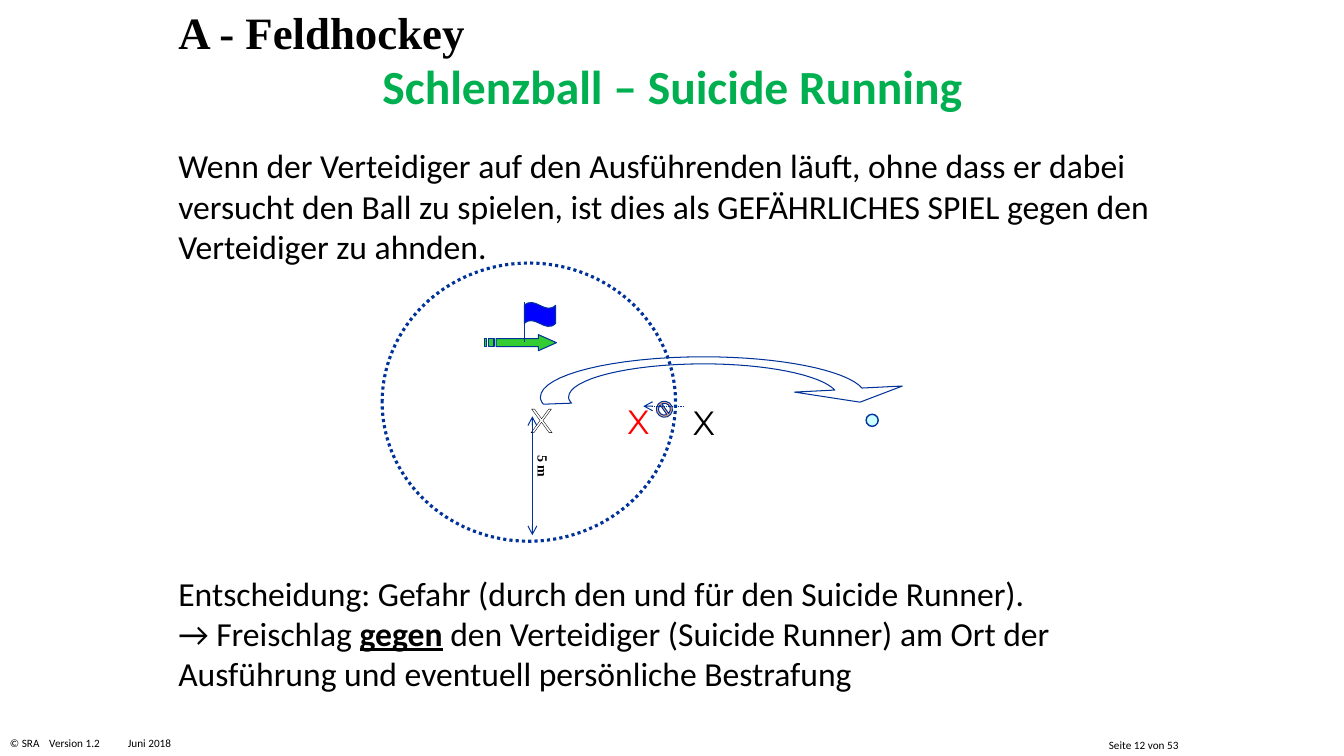
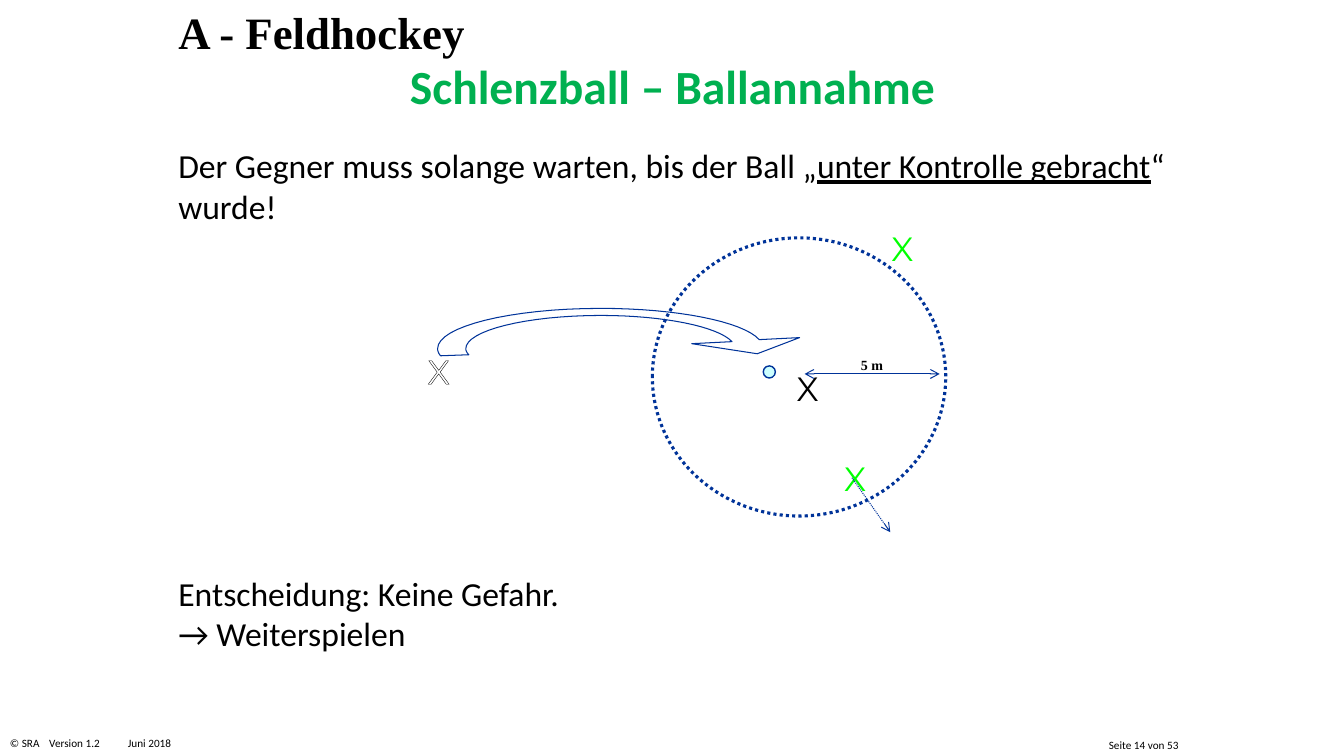
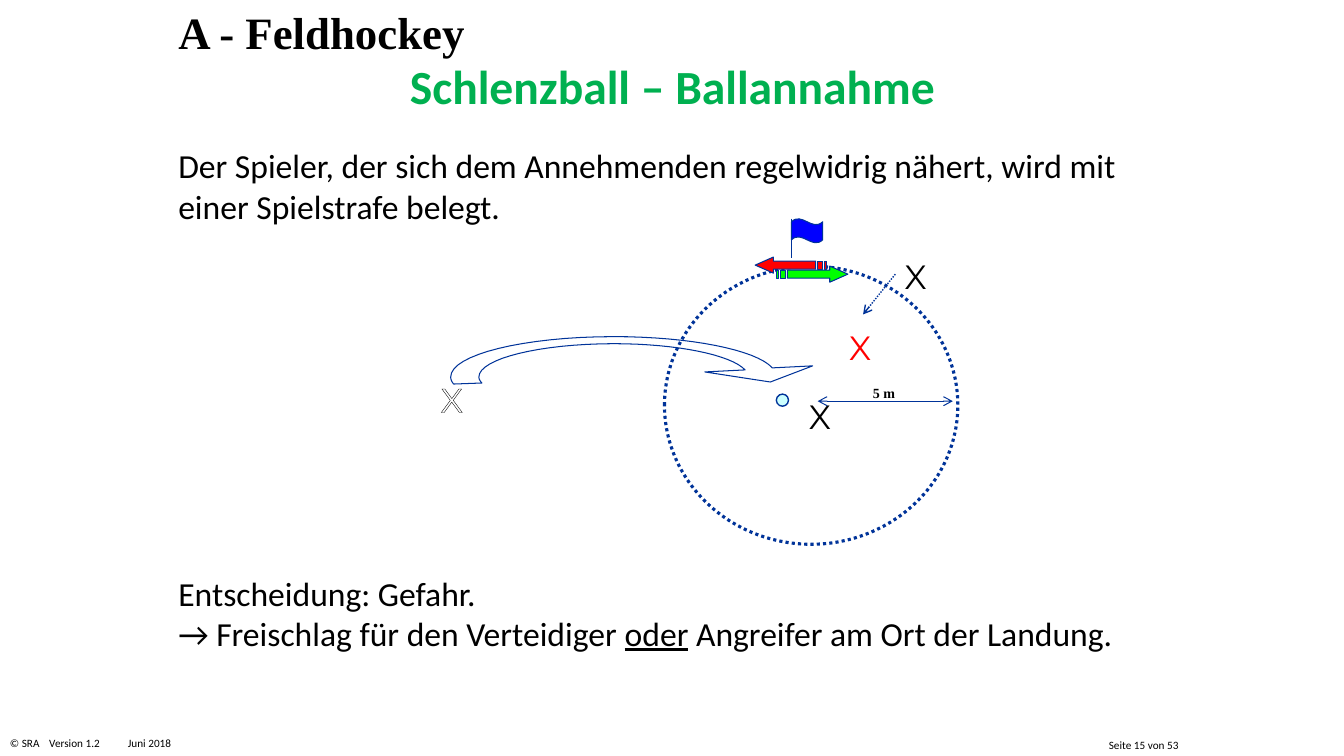
from lxml import etree
from pptx import Presentation
from pptx.dml.color import RGBColor
from pptx.enum import dml, shapes, text
from pptx.oxml.ns import qn
from pptx.util import Inches, Pt

BLACK = RGBColor(0x00, 0x00, 0x00)
WHITE = RGBColor(0xFF, 0xFF, 0xFF)
TITLE_GREEN = RGBColor(0x00, 0xB0, 0x50)
NAVY = RGBColor(0x00, 0x33, 0x99)
RED = RGBColor(0xFF, 0x00, 0x00)
LIME = RGBColor(0x00, 0xFF, 0x00)
SIGNAL_GREEN = RGBColor(0x33, 0xCC, 0x33)
FLAG_BLUE = RGBColor(0x00, 0x00, 0xFF)
BALL_BLUE = RGBColor(0xCC, 0xFF, 0xFF)
ORANGE = RGBColor(0xFF, 0x66, 0x00)

LEFT, WIDTH = 1.67, 10
SHAPE = shapes.MSO_SHAPE
DOTTED = dml.MSO_LINE.ROUND_DOT

# Throw arrow, relative to its corner: a pair is a corner, three pairs a Bézier curve
THROW_START = (2.92, 0.33)
THROW_PATH = [
    [(2.78, 0.18), (2.24, 0.07), (1.62, 0.07)],
    [(0.88, 0.07), (0.28, 0.22), (0.28, 0.40)],
    [(0.28, 0.42), (0.29, 0.44), (0.31, 0.46)],
    [(0.03, 0.47)],
    [(0.01, 0.45), (0, 0.42), (0, 0.40)],
    [(0, 0.18), (0.72, 0), (1.62, 0)],
    [(2.37, 0), (3.03, 0.13), (3.19, 0.31)],
    [(3.59, 0.29)], [(3.17, 0.45)], [(2.52, 0.35)],
]
throw_points = [THROW_START]
for piece in THROW_PATH:
    if len(piece) == 1:
        throw_points += piece
        continue
    curve = [throw_points[-1]] + piece
    for step in range(1, 17):
        t = step / 16
        weights = ((1 - t) ** 3, 3 * t * (1 - t) ** 2, 3 * t * t * (1 - t), t ** 3)
        throw_points.append(tuple(sum(w * point[axis] for w, point in zip(weights, curve))
                                  for axis in (0, 1)))

# Signal arrow: head with shaft, then two stripes
SIGNAL_OUTLINES = [
    [(0.53, 0), (0.53, 0.04), (0.11, 0.04), (0.11, 0.12), (0.53, 0.12), (0.53, 0.16), (0.71, 0.08)],
    [(0.04, 0.04), (0.04, 0.12), (0.09, 0.12), (0.09, 0.04)],
    [(0, 0.04), (0, 0.12), (0.02, 0.12), (0.02, 0.04)],
]

# players: left, top, colour; moves: from x, from y, to x, to y, weight
SLIDES = [
    dict(number=12, title="Schlenzball – Suicide Running",
         rule=[("Wenn der Verteidiger auf den Ausführenden läuft, ohne dass er dabei versucht "
                "den Ball zu spielen, ist dies als GEFÄHRLICHES SPIEL gegen den Verteidiger "
                "zu ahnden.", "")],
         decision=[("Entscheidung: Gefahr (durch den und für den Suicide Runner).", ""), ("\n", ""),
                   ("→ Freischlag ", ""), ("gegen", "bu"),
                   (" den Verteidiger (Suicide Runner) am Ort der Ausführung und eventuell "
                    "persönliche Bestrafung", "")],
         throw=(5.36, 3.54), circle=(3.79, 2.61),
         players=[(6.13, 3.93, RED), (6.78, 3.94, BLACK)],
         distance=(5.28, 4.13, 5.28, 5.31), label=(5.11, 4.56, 90),
         moves=[(6.78, 4.03, 6.38, 4.03, 0.75)], fouls=[(6.51, 3.98)],
         flags=[(5.2, 3)], signals=[(4.81, 3.32, SIGNAL_GREEN, 0)]),
    dict(number=14, title="Schlenzball – Ballannahme",
         rule=[("Der Gegner muss solange warten, bis der Ball „", ""),
               ("unter Kontrolle gebracht", "u"), ("“ wurde!", "")],
         decision=[("Entscheidung: Keine Gefahr.", ""), ("\n", ""), ("→ Weiterspielen", "")],
         throw=(4.34, 3.06), circle=(6.47, 2.36),
         players=[(7.81, 3.6, BLACK), (8.75, 2.21, LIME), (8.28, 4.49, LIME)],
         distance=(7.98, 3.71, 9.32, 3.71), label=(8.44, 3.49, 0),
         moves=[(8.45, 4.74, 8.83, 5.28, 0.75)], fouls=[], flags=[], signals=[]),
    dict(number=15, title="Schlenzball – Ballannahme",
         rule=[("Der Spieler, der sich dem Annehmenden regelwidrig nähert, wird mit einer "
                "Spielstrafe belegt.", "")],
         decision=[("Entscheidung: Gefahr.", ""), ("\n", ""),
                   ("→ Freischlag für den Verteidiger ", ""), ("oder", "u"),
                   (" Angreifer am Ort der Landung.", "")],
         throw=(4.47, 3.34), circle=(6.59, 2.64),
         players=[(7.93, 3.88, BLACK), (8.88, 2.49, BLACK), (8.33, 3.19, RED)],
         distance=(8.11, 3.98, 9.45, 3.98), label=(8.56, 3.77, 0),
         moves=[(8.88, 2.72, 8.56, 3.12, 1)], fouls=[],
         flags=[(7.85, 2.17)],
         signals=[(7.7, 2.64, LIME, 0), (7.49, 2.55, RED, 180)]),
]


def add_text(page, left, top, width, height, content, size=24, font="Calibri", color=BLACK,
             bold=False, align=text.PP_ALIGN.LEFT, wrap=True, anchor=text.MSO_ANCHOR.TOP,
             inset=0.1, tabs=(), outlined=False, rotation=0):
    """Content is a string or a list of (text, style); style may hold b and u."""
    box = page.shapes.add_textbox(Inches(left), Inches(top), Inches(width), Inches(height))
    box.rotation = rotation
    frame = box.text_frame
    frame.word_wrap = wrap
    frame.vertical_anchor = anchor
    frame.margin_left = frame.margin_right = Inches(inset)
    frame.margin_top = frame.margin_bottom = Inches(inset / 2)
    para = frame.paragraphs[0]
    para.alignment = align
    if tabs:
        tab_list = etree.SubElement(para._p.get_or_add_pPr(), qn("a:tabLst"))
        for position in tabs:
            etree.SubElement(tab_list, qn("a:tab"), pos=str(Inches(position)), algn="l")
    for words, style in [(content, "")] if isinstance(content, str) else content:
        if words == "\n":
            para.add_line_break()
            continue
        span = para.add_run()
        span.text = words
        span.font.name = font
        span.font.size = Pt(size)
        span.font.bold = bold or "b" in style
        span.font.underline = "u" in style
        span.font.color.rgb = color
        if outlined:
            outline = etree.Element(qn("a:ln"), w=str(Pt(0.75)))
            fill = etree.SubElement(outline, qn("a:solidFill"))
            etree.SubElement(fill, qn("a:srgbClr"), val=str(BLACK))
            span.font._element.insert(0, outline)
    return box


def add_line(page, from_x, from_y, to_x, to_y, weight=0.75, dash=None, ends=()):
    """Ends lists the arrowheads wanted: headEnd, tailEnd."""
    line = page.shapes.add_connector(shapes.MSO_CONNECTOR.STRAIGHT, Inches(from_x),
                                     Inches(from_y), Inches(to_x), Inches(to_y))
    line.line.color.rgb = NAVY
    line.line.width = Pt(weight)
    if dash:
        line.line.dash_style = dash
    properties = line._element.spPr
    for end in ends:
        etree.SubElement(properties.find(qn("a:ln")), qn("a:" + end), type="arrow")
    etree.SubElement(properties, qn("a:effectLst"))


deck = Presentation()
deck.slide_width = Inches(13.33)
deck.slide_height = Inches(7.5)

for scene in SLIDES:
    page = deck.slides.add_slide(deck.slide_layouts[6])

    add_text(page, 0, 7.26, 1.9, 0.24, "© SRA\tVersion 1.2\tJuni 2018", size=8, tabs=(0.39, 1.17))
    add_text(page, 10.38, 7.29, 1.39, 0.21, f"Seite {scene['number']} von 53", size=8,
             align=text.PP_ALIGN.RIGHT, anchor=text.MSO_ANCHOR.MIDDLE, inset=0.08)
    add_text(page, LEFT, 0, WIDTH, 0.64, "A - Feldhockey", size=32, font="Times New Roman",
             bold=True)
    add_text(page, LEFT, 0.52, WIDTH, 0.67, scene["title"], size=34, color=TITLE_GREEN,
             bold=True, align=text.PP_ALIGN.CENTER)
    add_text(page, LEFT, 1.39, WIDTH, 0.91, scene["rule"])
    add_text(page, LEFT, 5.63, WIDTH, 0.91, scene["decision"])

    throw_x, throw_y = scene["throw"]
    thrower = (throw_x - 0.19, throw_y + 0.37, WHITE)
    for left, top, color in [thrower] + scene["players"]:
        add_text(page, left, top, 0.19, 0.2, "X", font="Montserrat", color=color, wrap=False,
                 outlined=True)

    # Preset shapes: kind, left, top, width, height, fill, line weight
    presets = [(SHAPE.OVAL, *scene["circle"], 2.91, 2.76, None, 2.25),
               (SHAPE.OVAL, throw_x + 3.23, throw_y + 0.57, 0.12, 0.12, BALL_BLUE, 1)]
    presets += [(SHAPE.NO_SYMBOL, *place, 0.16, 0.16, ORANGE, 0.75) for place in scene["fouls"]]
    presets += [(SHAPE.WAVE, *place, 0.31, 0.24, FLAG_BLUE, 0.75) for place in scene["flags"]]
    drawn = []
    for kind, left, top, width, height, fill, weight in presets:
        shape = page.shapes.add_shape(kind, Inches(left), Inches(top), Inches(width),
                                      Inches(height))
        if kind == SHAPE.NO_SYMBOL:
            shape.adjustments[0] = 0.13
            shape.rotation = 9.8
        drawn.append((shape, fill, weight))

    # Freeform shapes: outlines, left, top, fill, rotation
    freeforms = [([throw_points], throw_x, throw_y, None, 0)]
    freeforms += [(SIGNAL_OUTLINES, *signal) for signal in scene["signals"]]
    for outlines, left, top, fill, rotation in freeforms:
        builder = None
        for outline in outlines:
            points = [(Inches(left + x), Inches(top + y)) for x, y in outline]
            if builder is None:
                builder = page.shapes.build_freeform(*points[0])
            else:
                builder.move_to(*points[0])
            builder.add_line_segments(points[1:], close=True)
        shape = builder.convert_to_shape()
        shape.rotation = rotation
        drawn.append((shape, fill, 0.75))

    for shape, fill, weight in drawn:
        shape.shadow.inherit = False
        shape.line.color.rgb = NAVY
        shape.line.width = Pt(weight)
        if weight == 2.25:
            shape.line.dash_style = DOTTED
        if fill is None:
            shape.fill.background()
            continue
        shape.fill.solid()
        shape.fill.fore_color.rgb = fill
        if fill == ORANGE:
            tint = shape._element.spPr.find(qn("a:solidFill")).find(qn("a:srgbClr"))
            etree.SubElement(tint, qn("a:alpha"), val="50000")

    for left, top in scene["flags"]:
        add_line(page, left, top, left, top + 0.39)
    for *ends, weight in scene["moves"]:
        add_line(page, *ends, weight=weight, dash=DOTTED, ends=["tailEnd"])
    add_line(page, *scene["distance"], ends=["headEnd", "tailEnd"])
    left, top, rotation = scene["label"]
    add_text(page, left, top, 0.55, 0.27, "5 m", size=10, font="Times New Roman", bold=True,
             rotation=rotation)

deck.save("out.pptx")
